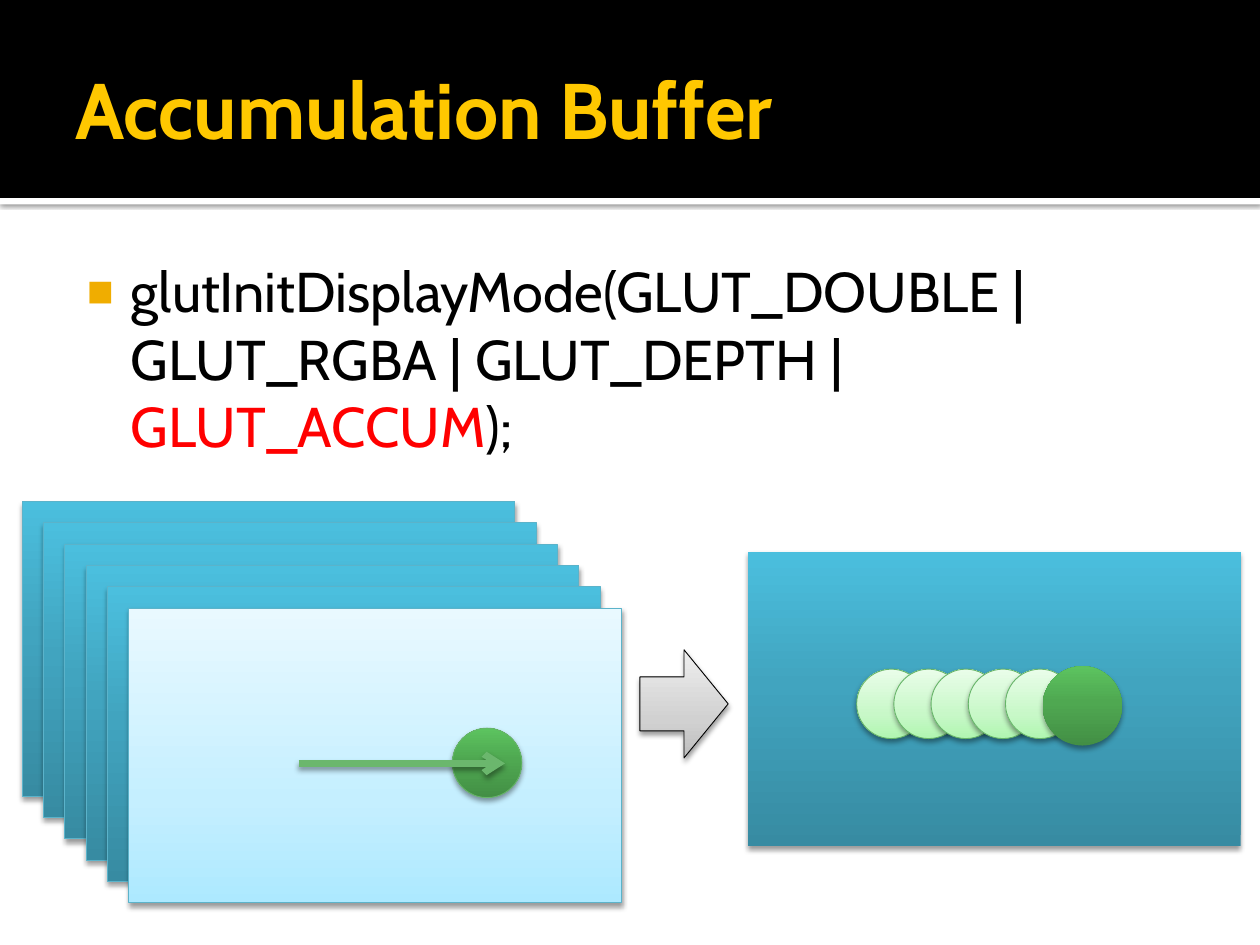
from lxml import etree
from pptx import Presentation
from pptx.dml.color import RGBColor
from pptx.enum.shapes import MSO_CONNECTOR, MSO_SHAPE
from pptx.enum.text import MSO_ANCHOR, MSO_AUTO_SIZE, PP_ALIGN
from pptx.oxml import parse_xml
from pptx.oxml.ns import nsdecls, qn
from pptx.util import Cm, Pt

RECTANGLE = MSO_SHAPE.RECTANGLE
OVAL = MSO_SHAPE.OVAL
RIGHT_ARROW = MSO_SHAPE.RIGHT_ARROW
STRAIGHT = MSO_CONNECTOR.STRAIGHT

FONT = "Cabin"
BLACK = RGBColor(0x00, 0x00, 0x00)
WHITE = RGBColor(0xFF, 0xFF, 0xFF)
GOLD = RGBColor(0xFF, 0xC8, 0x00)
BULLET_ORANGE = RGBColor(0xF0, 0xAD, 0x00)
RED = RGBColor(0xFF, 0x00, 0x00)
BLUE_LINE = RGBColor(0x5B, 0xB3, 0xCA)
GREEN_LINE = RGBColor(0x67, 0xB5, 0x69)
MOTION_GREEN = RGBColor(0x6B, 0xB7, 0x6D)


def gradient(middle, *colors):
    """Pair three colours, from bottom to top, with their positions."""
    return list(zip((0, middle, 100), (RGBColor.from_string(c) for c in colors)))


DEEP_BLUE = gradient(55, "378BA2", "41A4BF", "4BBFDE")
PALE_BLUE = gradient(35, "ADE9FF", "C5EFFF", "E9F9FF")
DEEP_GREEN = gradient(55, "438F45", "4FA851", "5CC35F")
PALE_GREEN = gradient(35, "B0F6B1", "C8F8C8", "E9FDE9")
GRAY = gradient(35, "BDBDBD", "D1D1D1", "EEEEEE")


def set_shadow(element, blur=3.1, distance=2, opacity=38):
    """Give a shape or connector a soft shadow falling straight down."""
    properties = element.spPr
    for old in properties.findall(qn("a:effectLst")):
        properties.remove(old)
    properties.append(parse_xml(
        f'<a:effectLst {nsdecls("a")}><a:outerShdw blurRad="{Pt(blur)}" '
        f'dist="{Pt(distance)}" dir="5400000" rotWithShape="0">'
        f'<a:srgbClr val="000000"><a:alpha val="{opacity * 1000}"/></a:srgbClr>'
        f'</a:outerShdw></a:effectLst>'))


def set_gradient(shape, stops):
    """Fill a shape with a vertical gradient that starts at the bottom."""
    shape.fill.gradient()
    shape.fill.gradient_angle = 90
    stop_list = shape._element.spPr.find(qn("a:gradFill")).find(qn("a:gsLst"))
    for old in list(stop_list):
        stop_list.remove(old)
    for position, color in stops:
        stop = etree.SubElement(stop_list, qn("a:gs"), pos=str(position * 1000))
        etree.SubElement(stop, qn("a:srgbClr"), val=str(color))


def add_block(slide, kind, left, top, width, height, fill, line=None):
    """Add a shape, sizes in cm, with a plain colour or a gradient."""
    shape = slide.shapes.add_shape(kind, Cm(left), Cm(top), Cm(width), Cm(height))
    shape.shadow.inherit = False
    if isinstance(fill, RGBColor):
        shape.fill.solid()
        shape.fill.fore_color.rgb = fill
    else:
        set_gradient(shape, fill)
        set_shadow(shape._element)
    if line is None:
        shape.line.fill.background()
    else:
        shape.line.color.rgb = line
        shape.line.width = Pt(0.5)
    return shape


def add_motion_arrow(slide, start, end, y):
    arrow = slide.shapes.add_connector(STRAIGHT, Cm(start), Cm(y), Cm(end), Cm(y))
    arrow.line.color.rgb = MOTION_GREEN
    arrow.line.width = Pt(3.82)
    etree.SubElement(arrow.line._get_or_add_ln(), qn("a:tailEnd"), type="arrow")
    set_shadow(arrow._element)


def place_text(placeholder, left, top, width, height, margins, anchor):
    placeholder.left, placeholder.top = Cm(left), Cm(top)
    placeholder.width, placeholder.height = Cm(width), Cm(height)
    frame = placeholder.text_frame
    frame.margin_left, frame.margin_top, frame.margin_right, frame.margin_bottom = (
        Cm(margin) for margin in margins)
    frame.vertical_anchor = anchor
    frame.word_wrap = True
    frame.auto_size = MSO_AUTO_SIZE.NONE
    return frame


def format_run(run, size, color, bold=False):
    run.font.name = FONT
    run.font.size = Pt(size)
    run.font.bold = bold
    run.font.color.rgb = color


def add_bullet(paragraph):
    properties = paragraph._p.get_or_add_pPr()
    properties.set("marL", str(Cm(1.22)))
    properties.set("indent", str(Cm(-0.89)))
    color = etree.SubElement(properties, qn("a:buClr"))
    etree.SubElement(color, qn("a:srgbClr"), val=str(BULLET_ORANGE))
    etree.SubElement(properties, qn("a:buSzPct"), val="80000")
    etree.SubElement(properties, qn("a:buFont"), typeface="Arial")
    etree.SubElement(properties, qn("a:buChar"), char="■")


def add_header(slide):
    """Black banner with a white strip, behind the text."""
    strip = add_block(slide, RECTANGLE, 0, 3.99, 25.4, 0.13, WHITE)
    set_shadow(strip._element, blur=2.5, distance=0.8, opacity=60)
    banner = add_block(slide, RECTANGLE, 0, 0, 25.4, 3.99, BLACK)
    for index, shape in enumerate((strip, banner), start=2):
        slide.shapes._spTree.insert(index, shape._element)


def add_text(slide):
    title = place_text(slide.shapes.title, 1.27, 0.43, 22.86, 3.48,
                       (0.25, 0.13, 0.13, 0.13), MSO_ANCHOR.MIDDLE)
    title.text = "Accumulation Buffer"
    title.paragraphs[0].alignment = PP_ALIGN.LEFT
    format_run(title.paragraphs[0].runs[0], 45, GOLD, bold=True)

    body = place_text(slide.placeholders[1], 1.27, 4.93, 22.86, 12.85,
                      (0.15, 0.25, 0.25, 0.13), MSO_ANCHOR.TOP)
    paragraph = body.paragraphs[0]
    paragraph.space_before = Pt(0)
    add_bullet(paragraph)
    for text, color in (
            ("glutInitDisplayMode(GLUT_DOUBLE | GLUT_RGBA | GLUT_DEPTH | ", BLACK),
            ("GLUT_ACCUM", RED),
            (");", BLACK)):
        run = paragraph.add_run()
        run.text = text
        format_run(run, 32, color)


def add_frames(slide):
    """Stack of frames, the front one pale with a moving ball."""
    count, step = 6, 0.43
    for index in range(count):
        fill = PALE_BLUE if index == count - 1 else DEEP_BLUE
        add_block(slide, RECTANGLE, 0.45 + index * step, 10.11 + index * step,
                  9.93, 5.94, fill, BLUE_LINE)


def add_result(slide):
    """Accumulated frame with the ball's trail."""
    for index in range(5):
        add_block(slide, OVAL, 17.27 + index * 0.75, 13.49, 1.4, 1.4,
                  PALE_GREEN, GREEN_LINE)
    add_block(slide, OVAL, 21.02, 13.43, 1.6, 1.6, DEEP_GREEN)


def main():
    presentation = Presentation()
    presentation.slide_width, presentation.slide_height = Cm(25.4), Cm(19.05)
    slide = presentation.slides.add_slide(presentation.slide_layouts[1])
    add_header(slide)
    add_text(slide)
    add_frames(slide)
    add_block(slide, RECTANGLE, 15.08, 11.12, 9.93, 5.94, DEEP_BLUE)
    add_block(slide, RIGHT_ARROW, 12.9, 13.1, 1.78, 2.18, GRAY, BLACK)
    # Ball and its direction of motion
    add_block(slide, OVAL, 9.12, 14.68, 1.4, 1.4, DEEP_GREEN, GREEN_LINE)
    add_motion_arrow(slide, 6.02, 10.18, 15.39)
    add_result(slide)
    presentation.save("out.pptx")


if __name__ == "__main__":
    main()
